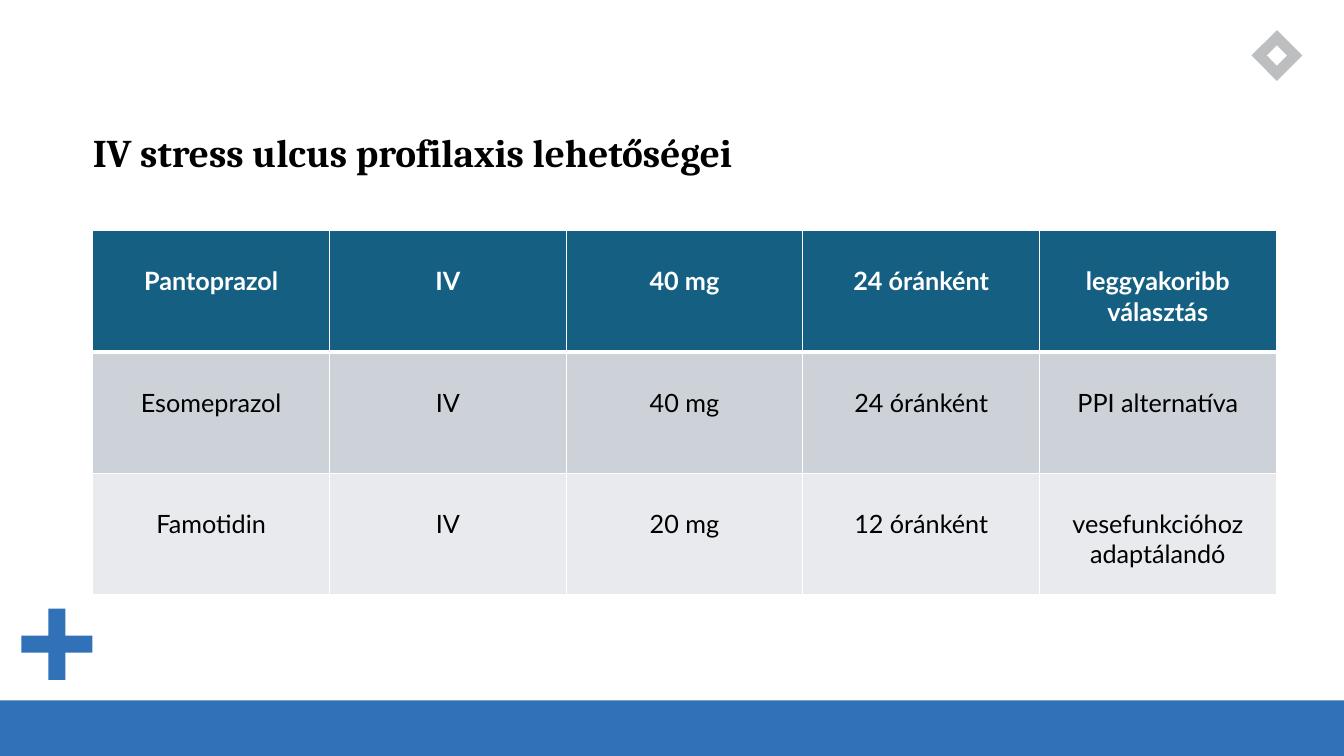
from lxml import etree
from pptx import Presentation
from pptx import util as u
from pptx.dml.color import RGBColor
from pptx.enum import shapes, text
from pptx.oxml.ns import qn

COLORS = {
    "blue": "3071B8",
    "grey": "BCBEC0",
    "header": "156082",
    "band": "CCD2D8",
    "light": "E8EAED",
    "white": "FFFFFF",
    "black": "000000",
}
ROWS = [
    ["Pantoprazol", "IV", "40 mg", "24 óránként", "leggyakoribb választás"],
    ["Esomeprazol", "IV", "40 mg", "24 óránként", "PPI alternatíva"],
    ["Famotidin", "IV", "20 mg", "12 óránként", "vesefunkcióhoz adaptálandó"],
]
ROW_FILLS = ["header", "band", "light"]


def rgb(name):
    return RGBColor.from_string(COLORS[name])


def paint(sp, color):
    sp.shadow.inherit = False
    sp.fill.solid()
    sp.fill.fore_color.rgb = rgb(color)
    sp.line.fill.background()


def style_run(r, font, size, color, bold):
    r.font.name = font
    r.font.size = u.Pt(size)
    r.font.color.rgb = rgb(color)
    r.font.bold = bold


def add_footer(slide, left, top, width, height):
    bar = slide.shapes.add_shape(
        shapes.MSO_SHAPE.RECTANGLE, u.Cm(left), u.Cm(top), u.Cm(width), u.Cm(height))
    paint(bar, "blue")
    size = 1.79
    plus = slide.shapes.add_shape(
        shapes.MSO_SHAPE.CROSS, u.Cm(left + 0.54), u.Cm(top - 2.31), u.Cm(size), u.Cm(size))
    plus.adjustments[0] = 0.38
    paint(plus, "blue")


def add_diamond_ring(slide, left, top, size):
    outer, inner = size / 2, size / 5
    cx, cy = left + outer, top + outer

    def corners(dx, dy):
        points = [(cx - dx, cy), (cx, cy - dy), (cx + dx, cy), (cx, cy + dy)]
        return [(u.Cm(x), u.Cm(y)) for x, y in points]

    rim, hole = corners(outer, outer), corners(-inner, inner)
    fb = slide.shapes.build_freeform(*rim[0])
    fb.add_line_segments(rim[1:], close=True)
    fb.move_to(*hole[0])
    fb.add_line_segments(hole[1:], close=True)
    paint(fb.convert_to_shape(), "grey")


def add_title(slide, left, top, width, height):
    sp = slide.shapes.add_textbox(u.Cm(left), u.Cm(top), u.Cm(width), u.Cm(height))
    tf = sp.text_frame
    tf.word_wrap = True
    tf.vertical_anchor = text.MSO_ANCHOR.MIDDLE
    tf.margin_left = tf.margin_right = tf.margin_top = tf.margin_bottom = 0
    tf.text = "IV stress ulcus profilaxis lehetőségei"
    p = tf.paragraphs[0]
    p.line_spacing = 0.9
    style_run(p.runs[0], "Cambria", 28, "black", True)


def set_borders(cell, widths):
    tc_pr = cell._tc.get_or_add_tcPr()
    for i, (side, width) in enumerate(widths.items()):
        ln = etree.Element(qn(f"a:ln{side}"), w=str(u.Pt(width)))
        fill = etree.SubElement(ln, qn("a:solidFill"))
        etree.SubElement(fill, qn("a:srgbClr"), val=COLORS["white"])
        tc_pr.insert(i, ln)


def add_dose_table(slide, left, top, width, height):
    n_rows, n_cols = len(ROWS), len(ROWS[0])
    table = slide.shapes.add_table(
        n_rows, n_cols, u.Cm(left), u.Cm(top), u.Cm(width), u.Cm(height)).table
    for col in table.columns:
        col.width = u.Cm(width / n_cols)
    for i, values in enumerate(ROWS):
        table.rows[i].height = u.Cm(height / n_rows)
        for j, value in enumerate(values):
            cell = table.cell(i, j)
            cell.fill.solid()
            cell.fill.fore_color.rgb = rgb(ROW_FILLS[i])
            cell.margin_top = u.Cm(0.89)
            set_borders(cell, {"L": 1, "R": 1, "T": 3 if i == 1 else 1, "B": 3 if i == 0 else 1})
            cell.text_frame.text = value
            p = cell.text_frame.paragraphs[0]
            p.alignment = text.PP_ALIGN.CENTER
            style_run(p.runs[0], "Lato", 18, "white" if i == 0 else "black", i == 0)


def main():
    prs = Presentation()
    prs.slide_width, prs.slide_height = u.Cm(33.87), u.Cm(19.05)
    slide = prs.slides.add_slide(prs.slide_layouts[6])
    add_footer(slide, 0, 17.65, 33.87, 1.4)
    add_diamond_ring(slide, 31.54, 0.76, 1.28)
    add_dose_table(slide, 2.34, 5.81, 29.82, 9.17)
    add_title(slide, 2.34, 2.69, 28.93, 2.44)
    prs.save("out.pptx")


if __name__ == "__main__":
    main()
